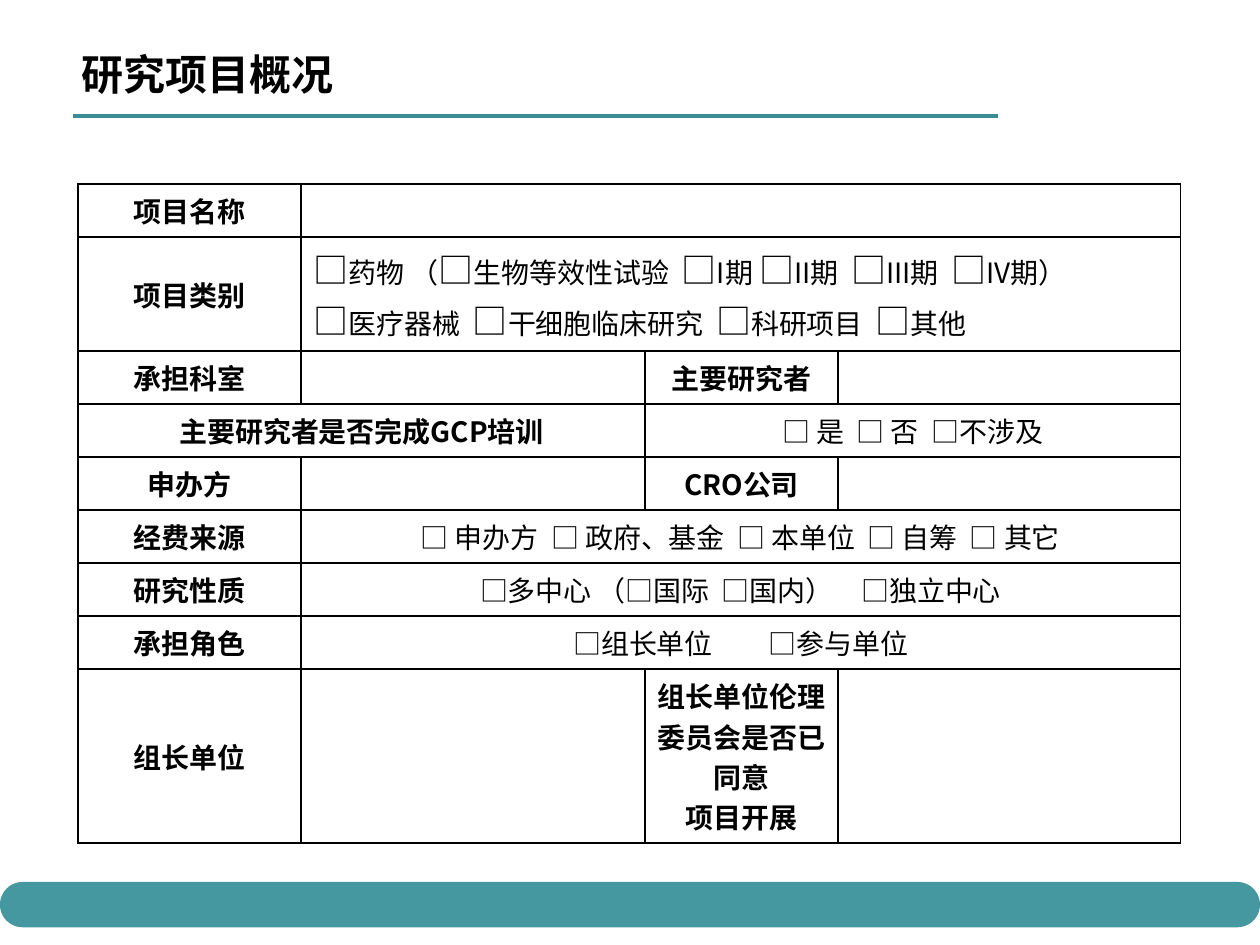
from lxml.etree import SubElement
from pptx import Presentation
from pptx.dml.color import RGBColor
from pptx.enum.shapes import MSO_CONNECTOR, MSO_SHAPE
from pptx.enum.text import MSO_ANCHOR, PP_ALIGN
from pptx.oxml.ns import qn
from pptx.util import Inches, Pt

FONT = "Noto Sans CJK SC"
BLACK = RGBColor(0x00, 0x00, 0x00)
WHITE = RGBColor(0xFF, 0xFF, 0xFF)
RULE_TEAL = RGBColor(0x3C, 0x8C, 0x93)
BAR_TEAL = RGBColor(0x45, 0x97, 0xA0)
BOX_MARK = "□"

TITLE = "研究项目概况"
CATEGORIES = [
    "□药物 （□生物等效性试验  □I期 □II期  □III期  □IV期）",
    "□医疗器械  □干细胞临床研究  □科研项目  □其他",
]
# Each row lists its cells as (columns spanned, paragraphs)
ROWS = [
    [(1, ["项目名称"]), (3, [])],
    [(1, ["项目类别"]), (3, CATEGORIES)],
    [(1, ["承担科室"]), (1, []), (1, ["主要研究者"]), (1, [])],
    [(2, ["主要研究者是否完成GCP培训"]), (2, ["□ 是  □ 否  □不涉及"])],
    [(1, ["申办方"]), (1, []), (1, ["CRO公司"]), (1, [])],
    [(1, ["经费来源"]), (3, ["□ 申办方  □ 政府、基金  □ 本单位  □ 自筹  □ 其它"])],
    [(1, ["研究性质"]), (3, ["□多中心 （□国际  □国内）　□独立中心"])],
    [(1, ["承担角色"]), (3, ["□组长单位　　□参与单位"])],
    [(1, ["组长单位"]), (1, []),
     (1, ["组长单位伦理委员会是否已同意", "项目开展"]), (1, [])],
]
COLUMN_WIDTHS = [1.77, 2.73, 1.53, 2.72]
LINE_ROW, CATEGORY_ROW, LAST_ROW = 0.37, 0.85, 1.17
ROW_HEIGHTS = [LINE_ROW, CATEGORY_ROW] + [LINE_ROW] * 6 + [LAST_ROW]


def add_span(para, text, size=16, bold=False):
    span = para.add_run()
    span.text = text
    font = span.font
    font.size, font.bold, font.name = Pt(size), bold, FONT
    font.color.rgb = BLACK
    SubElement(span._r.get_or_add_rPr(), qn("a:ea"), typeface=FONT)


def write(frame, lines, size=16, bold=False, align=PP_ALIGN.CENTER, mark_size=None):
    """Fill a frame; mark_size enlarges the check boxes."""
    for index, line in enumerate(lines):
        para = frame.paragraphs[0] if index == 0 else frame.add_paragraph()
        para.alignment = align
        if mark_size is None:
            add_span(para, line, size=size, bold=bold)
            continue
        for option in line.split(BOX_MARK)[1:]:
            add_span(para, BOX_MARK, size=mark_size, bold=bold)
            add_span(para, option, size=size, bold=bold)


def add_borders(cell, color="000000", width=Pt(1)):
    properties = cell._tc.get_or_add_tcPr()
    for index, side in enumerate(("a:lnL", "a:lnR", "a:lnT", "a:lnB")):
        line = properties.makeelement(qn(side), {"w": str(width)})
        properties.insert(index, line)
        SubElement(SubElement(line, qn("a:solidFill")), qn("a:srgbClr"), val=color)


def add_project_table(page):
    box = page.shapes.add_table(
        len(ROWS), len(COLUMN_WIDTHS), Inches(0.62), Inches(1.46),
        Inches(sum(COLUMN_WIDTHS)), Inches(sum(ROW_HEIGHTS)))
    table = box.table
    table.first_row = table.horz_banding = False
    for column, width in zip(table.columns, COLUMN_WIDTHS):
        column.width = Inches(width)
    for row, height in zip(table.rows, ROW_HEIGHTS):
        row.height = Inches(height)
    for cell in table.iter_cells():
        cell.fill.solid()
        cell.fill.fore_color.rgb = WHITE
        add_borders(cell)

    for row, cells in enumerate(ROWS):
        column = 0
        for width, lines in cells:
            cell = table.cell(row, column)
            if width > 1:
                cell.merge(table.cell(row, column + width - 1))
            cell.vertical_anchor = MSO_ANCHOR.MIDDLE
            if lines is CATEGORIES:
                write(cell.text_frame, lines, align=PP_ALIGN.LEFT, mark_size=20)
            else:
                is_label = not any(BOX_MARK in line for line in lines)
                write(cell.text_frame, lines, bold=is_label)
            column += width


def main():
    deck = Presentation()
    deck.slide_width, deck.slide_height = Inches(10), Inches(7.5)
    page = deck.slides.add_slide(deck.slide_layouts[5])

    # Title
    title = page.shapes.title
    title.left, title.top = Inches(0.55), Inches(0.25)
    title.width, title.height = Inches(8.3), Inches(0.67)
    title.text_frame.vertical_anchor = MSO_ANCHOR.MIDDLE
    write(title.text_frame, [TITLE], size=24, bold=True, align=PP_ALIGN.LEFT)

    add_project_table(page)

    # Rule under the title
    rule = page.shapes.add_connector(
        MSO_CONNECTOR.STRAIGHT, Inches(0.58), Inches(0.92), Inches(7.92), Inches(0.92))
    rule.line.color.rgb = RULE_TEAL
    rule.line.width = Pt(2.25)
    SubElement(rule._element.spPr, qn("a:effectLst"))

    # Footer bar
    bar = page.shapes.add_shape(
        MSO_SHAPE.ROUNDED_RECTANGLE, 0, Inches(7), deck.slide_width, Inches(0.36))
    bar.adjustments[0] = 0.5
    bar.shadow.inherit = False
    bar.fill.solid()
    bar.fill.fore_color.rgb = BAR_TEAL
    bar.line.fill.background()

    deck.save("out.pptx")


if __name__ == "__main__":
    main()
